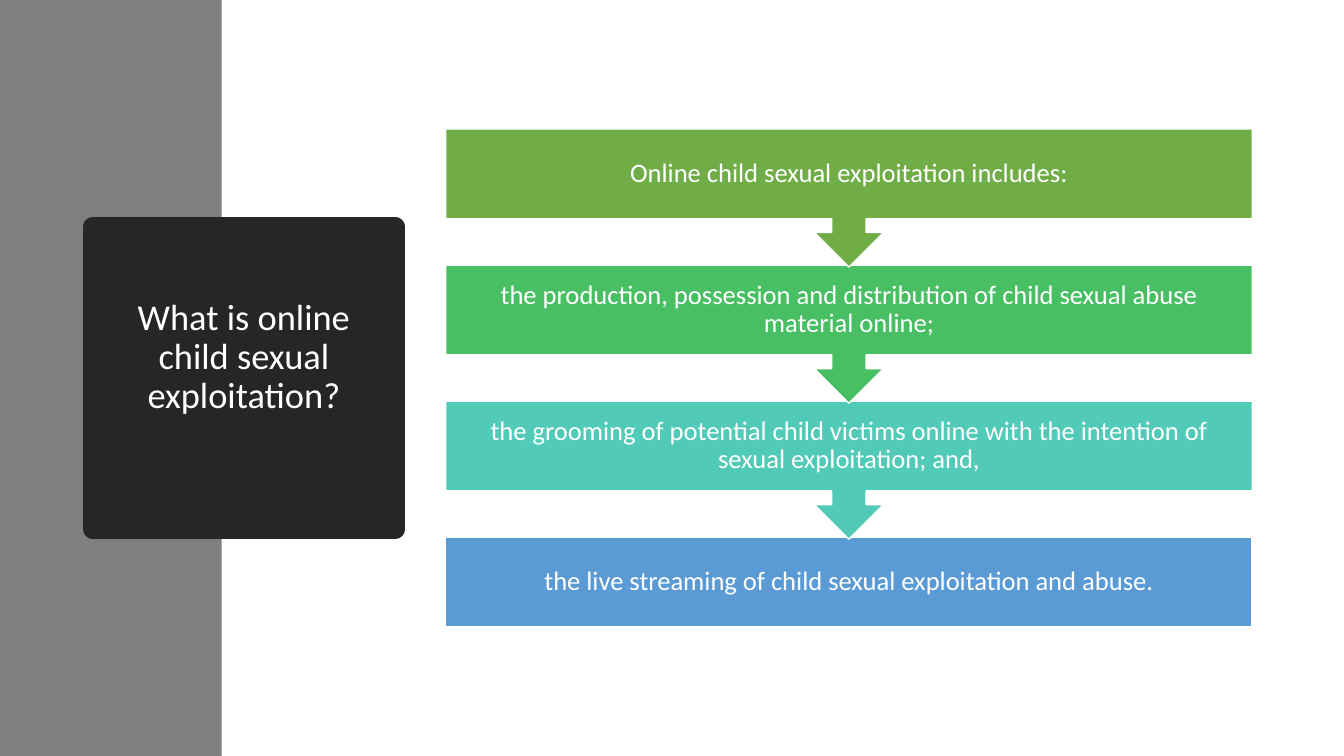
from pptx import Presentation
from pptx.dml.color import RGBColor
from pptx.enum.shapes import MSO_SHAPE
from pptx.enum.text import MSO_ANCHOR, MSO_AUTO_SIZE, PP_ALIGN
from pptx.util import Inches, Pt

RECTANGLE = MSO_SHAPE.RECTANGLE
CALLOUT = MSO_SHAPE.DOWN_ARROW_CALLOUT
MIDDLE = MSO_ANCHOR.MIDDLE
CENTER = PP_ALIGN.CENTER
NO_AUTOFIT = MSO_AUTO_SIZE.NONE
TITLE_ONLY = 5

FONT = "Calibri"
WHITE = "FFFFFF"
GREY = "7F7F7F"
CHARCOAL = "262626"

STEP_LEFT, STEP_TOP, STEP_WIDTH = 4.42, 1.28, 8
STEP_PITCH, BODY_HEIGHT, CALLOUT_HEIGHT = 1.35, 0.89, 1.37
STEPS = [
    ("Online child sexual exploitation includes:", "70AD47"),
    ("the production, possession and distribution of child sexual abuse material online;", "49BF64"),
    ("the grooming of potential child victims online with the intention of sexual exploitation; and,", "52CAB8"),
    ("the live streaming of child sexual exploitation and abuse.", "5B9BD5"),
]


def color(value):
    """Turn a hex string into a colour."""
    return RGBColor.from_string(value)


def paint(shape, fill, line=None, width=1):
    """Give a shape a solid fill and an optional outline."""
    shape.fill.solid()
    shape.fill.fore_color.rgb = color(fill)
    if line:
        shape.line.color.rgb = color(line)
        shape.line.width = Pt(width)
    else:
        shape.line.fill.background()


def write(shape, text, size, inset, bottom):
    """Write centred white text into a shape."""
    frame = shape.text_frame
    frame.word_wrap = True
    frame.auto_size = NO_AUTOFIT
    frame.vertical_anchor = MIDDLE
    frame.margin_left = frame.margin_right = frame.margin_top = Inches(inset)
    frame.margin_bottom = Inches(bottom)
    para = frame.paragraphs[0]
    para.alignment = CENTER
    para.line_spacing = 0.9
    span = para.add_run()
    span.text = text
    span.font.name = FONT
    span.font.size = Pt(size)
    span.font.color.rgb = color(WHITE)


def add_block(page, kind, left, top, width, height, fill, line=None):
    """Add a filled preset shape without a shadow."""
    block = page.shapes.add_shape(kind, Inches(left), Inches(top), Inches(width), Inches(height))
    block.shadow.inherit = False
    paint(block, fill, line)
    return block


def set_title(page, text):
    """Place the title in its dark square."""
    title = page.shapes.title
    title.left, title.top = Inches(0.92), Inches(2.25)
    title.width = title.height = Inches(3)
    paint(title, CHARCOAL, CHARCOAL, 13.75)
    write(title, text, 26, 0.4, 0.8)


def add_steps(page):
    """Stack the steps, each arrow above the step it points to."""
    last = len(STEPS) - 1
    for index, (text, fill) in reversed(list(enumerate(STEPS))):
        kind, height = (RECTANGLE, BODY_HEIGHT) if index == last else (CALLOUT, CALLOUT_HEIGHT)
        top = STEP_TOP + index * STEP_PITCH
        step = add_block(page, kind, STEP_LEFT, top, STEP_WIDTH, height, fill, WHITE)
        write(step, text, 19, 0.15, 0.15)


def main():
    """Build the slide and save it."""
    deck = Presentation()
    deck.slide_width, deck.slide_height = Inches(13.33), Inches(7.5)
    page = deck.slides.add_slide(deck.slide_layouts[TITLE_ONLY])
    band = add_block(page, RECTANGLE, 0, 0, 2.2, 7.5, GREY)
    page.shapes.title.element.addprevious(band.element)
    set_title(page, "What is online child sexual exploitation?")
    add_steps(page)
    deck.save("out.pptx")


if __name__ == "__main__":
    main()
